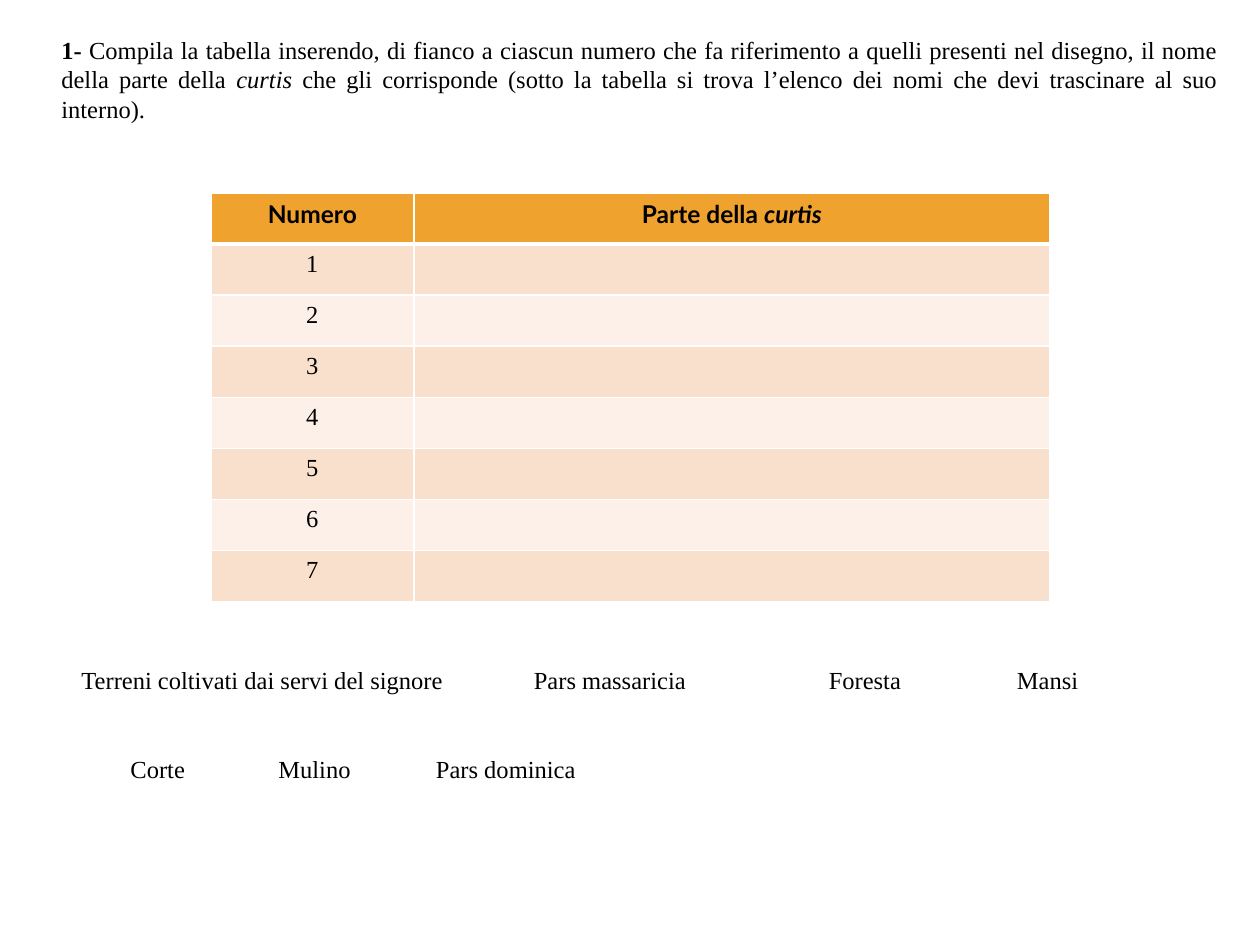
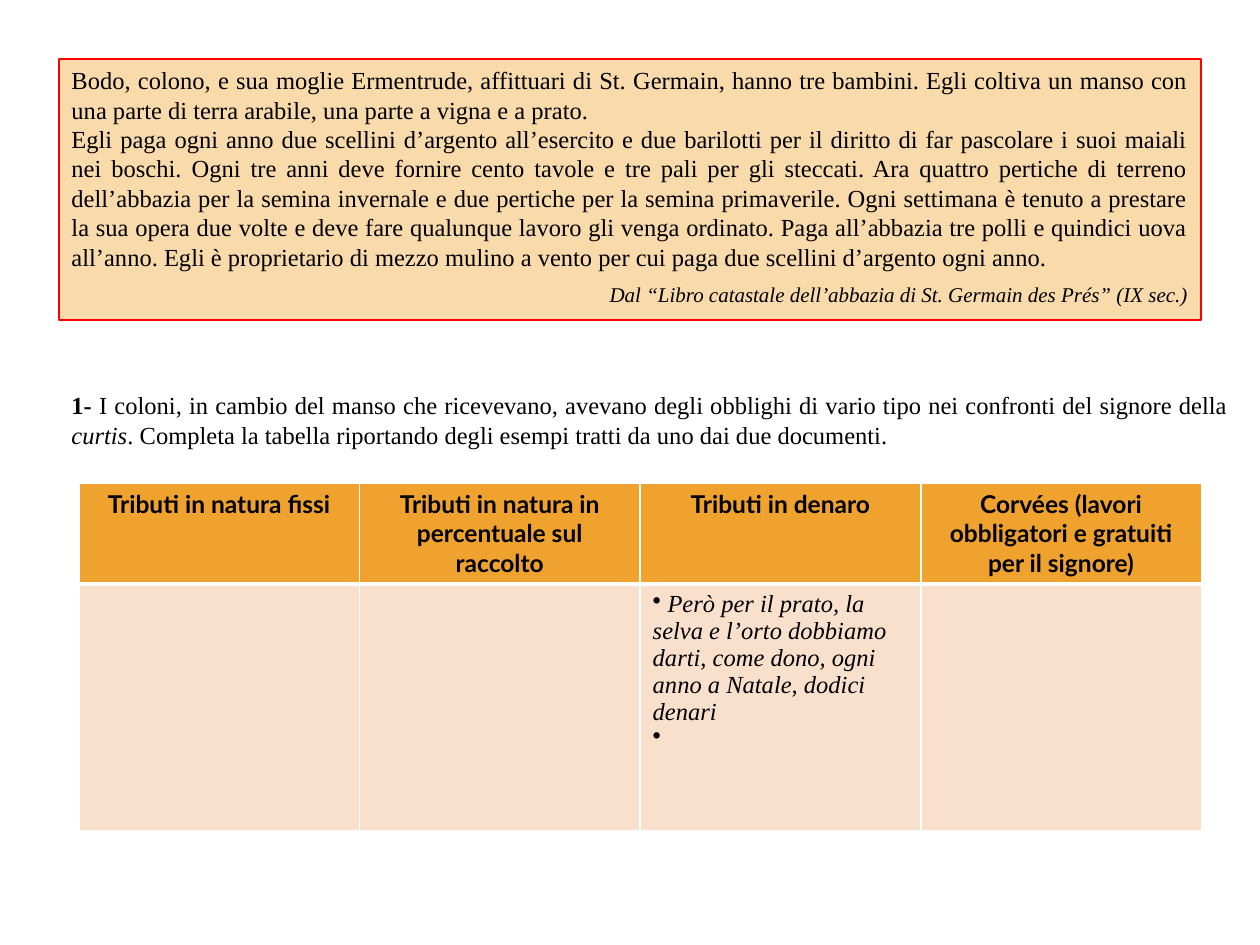
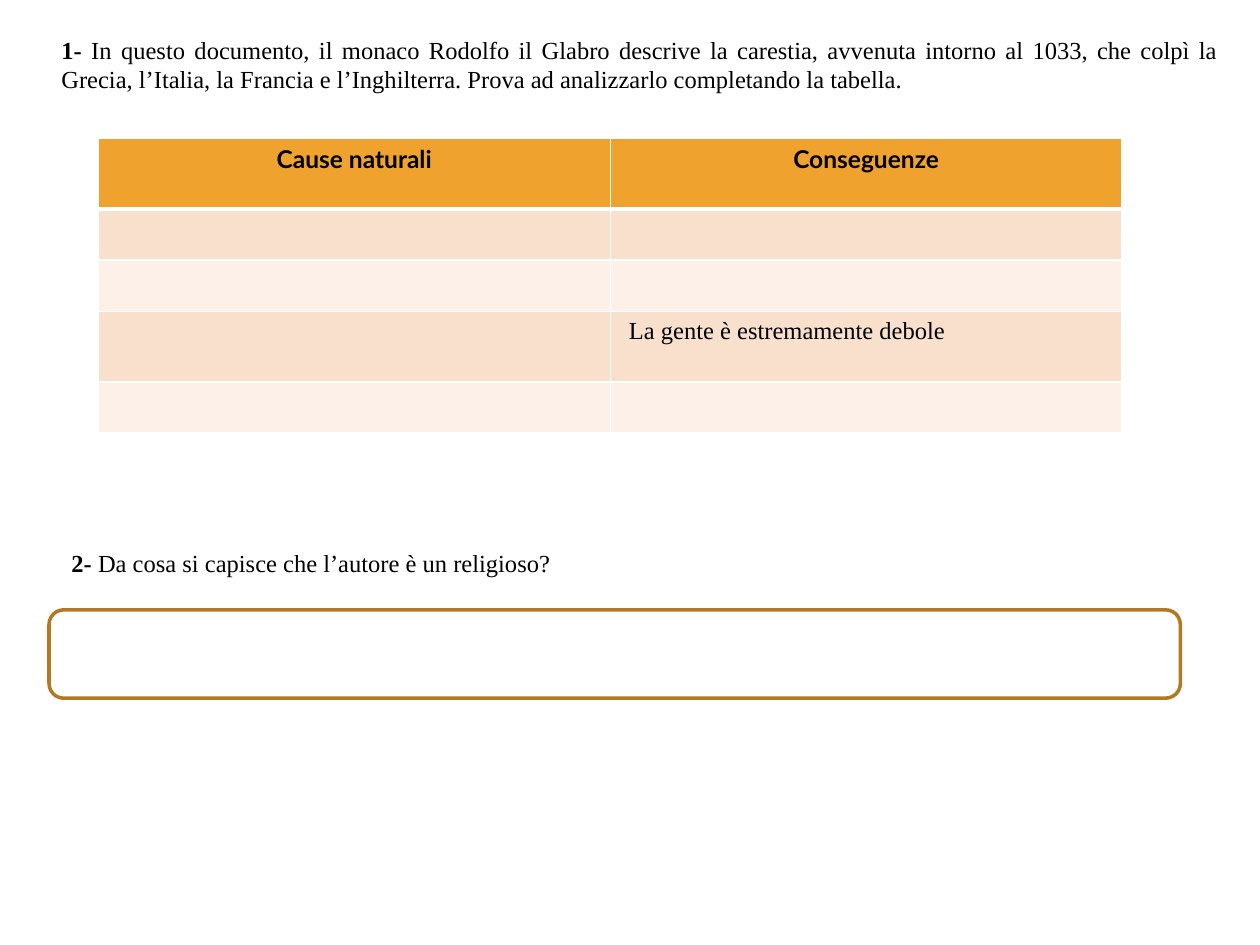
from lxml.etree import SubElement
from pptx import Presentation
from pptx.dml.color import RGBColor
from pptx.enum.shapes import MSO_SHAPE
from pptx.enum.text import MSO_ANCHOR, MSO_AUTO_SIZE, PP_ALIGN
from pptx.oxml import parse_xml
from pptx.oxml.ns import nsdecls, qn
from pptx.util import Pt

HUES = {"ink": "000000", "white": "FFFFFF", "head": "F0A22E", "odd": "F9E0CD",
        "even": "FCF0E8", "sand": "F9DAAB", "red": "FF0000", "brown": "B27822"}
RGB = {name: RGBColor.from_string(value) for name, value in HUES.items()}
SERIF, SANS = "Times New Roman", "Lato"


def write(para, runs, font=SERIF, size=14, align=None):
    """Add (text, style) runs, where style holds b for bold and i for italic."""
    para.alignment = align
    for text, style in runs:
        run = para.add_run()
        run.text = text
        run.font.name = font
        run.font.size = Pt(size)
        run.font.bold = "b" in style
        run.font.italic = "i" in style
        run.font.color.rgb = RGB["ink"]


def add_grid(slide, left, top, cols, rows, heads):
    """Add a banded table with white rules, thick below the head row."""
    frame = slide.shapes.add_table(len(rows), len(cols), Pt(left), Pt(top),
                                   Pt(sum(cols)), Pt(sum(rows)))
    grid = frame.table
    for col, width in zip(grid.columns, cols):
        col.width = Pt(width)
    for r, height in enumerate(rows):
        grid.rows[r].height = Pt(height)
        for cell in grid.rows[r].cells:
            cell.fill.solid()
            cell.fill.fore_color.rgb = RGB["head" if r == 0 else "odd" if r % 2 else "even"]
            props = cell._tc.get_or_add_tcPr()
            for n, side in enumerate(("lnL", "lnR", "lnT", "lnB")):
                thick = (r, side) in ((0, "lnB"), (1, "lnT"))
                props.insert(n, parse_xml(
                    f'<a:{side} {nsdecls("a")} w="{Pt(3 if thick else 1)}"><a:solidFill>'
                    f'<a:srgbClr val="{HUES["white"]}"/></a:solidFill></a:{side}>'))
    for cell, runs in zip(grid.rows[0].cells, heads):
        write(cell.text_frame.paragraphs[0], runs, SANS, align=PP_ALIGN.CENTER)
    return grid


deck = Presentation()
deck.slide_width, deck.slide_height = Pt(720), Pt(540)
blank = deck.slide_layouts[6]
parts, dues, famine = [deck.slides.add_slide(blank) for _ in range(3)]

# Numbered questions
tasks = [
    (parts, 28, 16.5, 58.5, [
        ("1- ", "b"),
        ("Compila la tabella inserendo, di fianco a ciascun numero che fa riferimento a quelli "
         "presenti nel disegno, il nome della parte della ", ""),
        ("curtis ", "i"),
        ("che gli corrisponde (sotto la tabella si trova l’elenco dei nomi che devi trascinare "
         "al suo interno).", "")]),
    (dues, 33.75, 219.5, 41, [
        ("1- ", "b"),
        ("I coloni, in cambio del manso che ricevevano, avevano degli obblighi di vario tipo "
         "nei confronti del signore della ", ""),
        ("curtis", "i"),
        (". Completa la tabella riportando degli esempi tratti da uno dai due documenti.", "")]),
    (famine, 28, 16.5, 41, [
        ("1- ", "b"),
        ("In questo documento, il monaco Rodolfo il Glabro descrive la carestia, avvenuta "
         "intorno al 1033, che colpì la Grecia, l’Italia, la Francia e l’Inghilterra. Prova "
         "ad analizzarlo completando la tabella.", "")]),
    (famine, 33.75, 309.5, 24.5, [
        ("2- ", "b"),
        ("Da cosa si capisce che l’autore è un religioso?", "")]),
]
for slide, left, top, height, runs in tasks:
    box = slide.shapes.add_textbox(Pt(left), Pt(top), Pt(675.5), Pt(height))
    box.text_frame.word_wrap = True
    box.text_frame.auto_size = MSO_AUTO_SIZE.SHAPE_TO_FIT_TEXT
    write(box.text_frame.paragraphs[0], runs, align=PP_ALIGN.JUSTIFY)

# Slide 1: parts of the curtis
grid = add_grid(parts, 120.5, 110.25, [116, 363.5], [29.2] * 8,
                [[("Numero", "b")], [("Parte della ", "b"), ("curtis", "bi")]])
for n in range(1, 8):
    write(grid.cell(n, 0).text_frame.paragraphs[0], [(str(n), "")], align=PP_ALIGN.CENTER)

names = [
    (376.5, [("Terreni coltivati dai servi del signore", 39.5, 227.5),
             ("Pars massaricia", 298, 102), ("Foresta", 466.5, 60), ("Mansi", 574, 54.5)]),
    (427.5, [("Corte", 67.5, 50.5), ("Mulino", 152, 56), ("Pars dominica", 242, 95)]),
]
for top, line in names:
    for name, left, width in line:
        box = parts.shapes.add_textbox(Pt(left), Pt(top), Pt(width), Pt(24.5))
        box.text_frame.word_wrap = False
        box.text_frame.auto_size = MSO_AUTO_SIZE.SHAPE_TO_FIT_TEXT
        write(box.text_frame.paragraphs[0], [(name, "")])

# Slide 2: dues of the tenants
heads = ["Tributi in natura fissi", "Tributi in natura in percentuale sul raccolto",
         "Tributi in denaro", "Corvées (lavori obbligatori e gratuiti per il signore)"]
grid = add_grid(dues, 45, 276, [160.4] * 4, [57.6, 141], [[(head, "b")] for head in heads])
frame = grid.cell(1, 2).text_frame
points = [
    [(" ", ""), ("Però per il prato, la selva e l’orto dobbiamo darti, come dono, ogni anno "
                 "a Natale, dodici denari", "i")],
    [(" ", "")],
]
for n, runs in enumerate(points):
    para = frame.add_paragraph() if n else frame.paragraphs[0]
    write(para, runs)
    SubElement(para._p.get_or_add_pPr(), qn("a:buChar")).set("char", "•")

quote = dues.shapes.add_shape(MSO_SHAPE.RECTANGLE, Pt(33.75), Pt(33.75), Pt(652.5), Pt(149))
quote.shadow.inherit = False
quote.fill.solid()
quote.fill.fore_color.rgb = RGB["sand"]
quote.line.color.rgb = RGB["red"]
quote.line.width = Pt(1)
frame = quote.text_frame
frame.word_wrap = True
frame.auto_size = MSO_AUTO_SIZE.SHAPE_TO_FIT_TEXT
frame.vertical_anchor = MSO_ANCHOR.TOP
write(frame.paragraphs[0], [(
    "Bodo, colono, e sua moglie Ermentrude, affittuari di St. Germain, hanno tre bambini. Egli "
    "coltiva un manso con una parte di terra arabile, una parte a vigna e a prato.", "")],
    align=PP_ALIGN.JUSTIFY)
para = frame.add_paragraph()
para.space_after = Pt(6)
write(para, [(
    "Egli paga ogni anno due scellini d’argento all’esercito e due barilotti per il diritto di "
    "far pascolare i suoi maiali nei boschi. Ogni tre anni deve fornire cento tavole e tre pali "
    "per gli steccati. Ara quattro pertiche di terreno dell’abbazia per la semina invernale e "
    "due pertiche per la semina primaverile. Ogni settimana è tenuto a prestare la sua opera "
    "due volte e deve fare qualunque lavoro gli venga ordinato. Paga all’abbazia tre polli e "
    "quindici uova all’anno. Egli è proprietario di mezzo mulino a vento per cui paga due "
    "scellini d’argento ogni anno.", "")], align=PP_ALIGN.JUSTIFY)
write(frame.add_paragraph(), [(
    "Dal “Libro catastale dell’abbazia di St. Germain des Prés” (IX sec.)", "i")],
    size=12, align=PP_ALIGN.RIGHT)

# Slide 3: famine
grid = add_grid(famine, 56.25, 79, [292.5] * 2, [40.5, 29.2, 29.2, 40.5, 29.2],
                [[("Cause naturali", "b")], [("Conseguenze", "b")]])
write(grid.cell(3, 1).text_frame.paragraphs[0], [(" La gente è estremamente debole", "")])

reply = famine.shapes.add_shape(MSO_SHAPE.ROUNDED_RECTANGLE, Pt(28), Pt(348.5), Pt(646.5), Pt(50.5))
reply.shadow.inherit = False
reply.fill.solid()
reply.fill.fore_color.rgb = RGB["white"]
reply.line.color.rgb = RGB["brown"]
reply.line.width = Pt(2)

deck.save("out.pptx")
